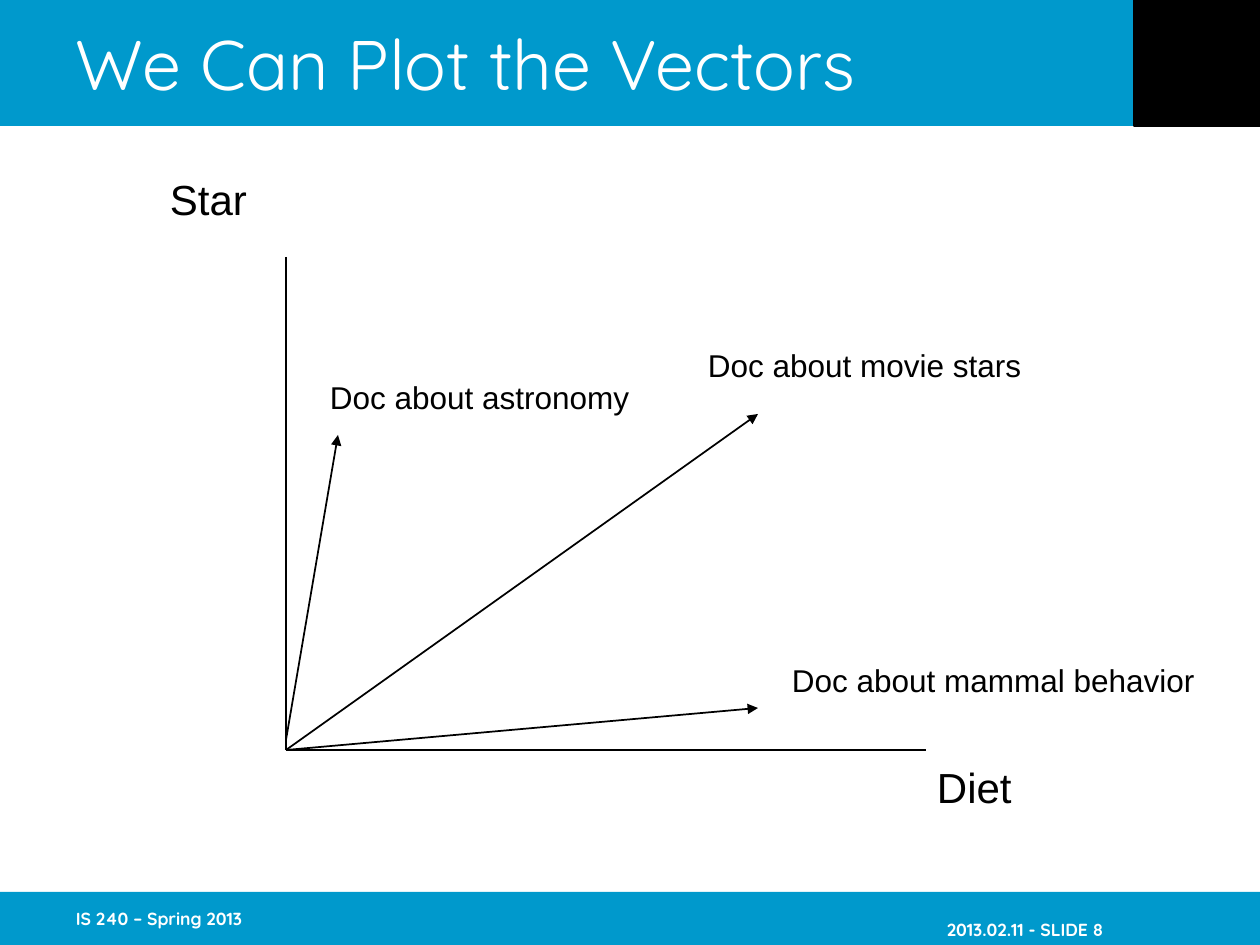
from dataclasses import dataclass

import pptx
import pptx.dml.color
import pptx.enum.shapes
import pptx.enum.text
import pptx.oxml
import pptx.oxml.ns
import pptx.util

PIXELS_PER_INCH = 126
ANCHOR = pptx.enum.text.MSO_ANCHOR
ALIGN = pptx.enum.text.PP_ALIGN


@dataclass(frozen=True)
class Theme:
    band: str = "0099CC"
    ink: str = "000000"
    paper: str = "FFFFFF"
    brand_font: str = "Quicksand"
    plot_font: str = "Arial"
    title_size: int = 40
    axis_size: int = 24
    label_size: int = 18
    footer_size: int = 10
    line_width: float = 1
    border_width: float = 0.75


THEME = Theme()


@dataclass(frozen=True)
class Area:
    left: int
    top: int
    width: int
    height: int


@dataclass(frozen=True)
class Insets:
    left: int = 13
    top: int = 6
    right: int = 13
    bottom: int = 6


@dataclass(frozen=True)
class Block:
    area: Area
    fill: str
    border: str | None = None


@dataclass(frozen=True)
class Caption:
    text: str
    area: Area
    size: int
    font: str = THEME.plot_font
    color: str = THEME.ink
    bold: bool = False
    anchor: ANCHOR = ANCHOR.TOP
    align: ALIGN = ALIGN.LEFT
    insets: Insets = Insets()


@dataclass(frozen=True)
class Stroke:
    start: tuple[int, int]
    end: tuple[int, int]
    arrow: bool = False


def px(length: int) -> pptx.util.Emu:
    return pptx.util.Emu(round(length * 914400 / PIXELS_PER_INCH))


def rgb(color: str) -> pptx.dml.color.RGBColor:
    return pptx.dml.color.RGBColor.from_string(color)


def place(area: Area) -> tuple[pptx.util.Emu, ...]:
    return px(area.left), px(area.top), px(area.width), px(area.height)


def draw_block(page, block: Block) -> None:
    shape = page.shapes.add_shape(
        pptx.enum.shapes.MSO_SHAPE.RECTANGLE, *place(block.area))
    shape.shadow.inherit = False
    shape.fill.solid()
    shape.fill.fore_color.rgb = rgb(block.fill)
    if block.border:
        shape.line.color.rgb = rgb(block.border)
        shape.line.width = pptx.util.Pt(THEME.border_width)
    else:
        shape.line.fill.background()


def draw_caption(page, caption: Caption) -> None:
    box = page.shapes.add_textbox(*place(caption.area))
    frame = box.text_frame
    frame.word_wrap = True
    frame.vertical_anchor = caption.anchor
    frame.margin_left = px(caption.insets.left)
    frame.margin_top = px(caption.insets.top)
    frame.margin_right = px(caption.insets.right)
    frame.margin_bottom = px(caption.insets.bottom)
    para = frame.paragraphs[0]
    para.alignment = caption.align
    span = para.add_run()
    span.text = caption.text
    span.font.name = caption.font
    span.font.size = pptx.util.Pt(caption.size)
    span.font.bold = caption.bold
    span.font.color.rgb = rgb(caption.color)


def draw_stroke(page, stroke: Stroke) -> None:
    line = page.shapes.add_connector(
        pptx.enum.shapes.MSO_CONNECTOR.STRAIGHT,
        *map(px, stroke.start + stroke.end))
    line.line.color.rgb = rgb(THEME.ink)
    line.line.width = pptx.util.Pt(THEME.line_width)
    properties = line.line._get_or_add_ln()
    if stroke.arrow:
        head = pptx.oxml.parse_xml(
            f'<a:tailEnd {pptx.oxml.ns.nsdecls("a")} type="triangle"/>')
        properties.append(head)
    effects = pptx.oxml.parse_xml(
        f'<a:effectLst {pptx.oxml.ns.nsdecls("a")}/>')
    properties.addnext(effects)


def band_caption(text: str, area: Area, size: int, **options) -> Caption:
    return Caption(text, area, size, THEME.brand_font, THEME.paper,
                   anchor=ANCHOR.MIDDLE, **options)


# Header and footer bands
BLOCKS = [
    Block(Area(0, 0, 1260, 126), THEME.band),
    Block(Area(0, 892, 1260, 53), THEME.band),
    Block(Area(1134, 0, 126, 126), THEME.ink, border=THEME.ink),
]

# Axes and document vectors, all from one origin
ORIGIN = (286, 750)
STROKES = [
    Stroke((286, 257), ORIGIN),
    Stroke(ORIGIN, (926, 750)),
    Stroke((286, 740), (338, 435), arrow=True),
    Stroke(ORIGIN, (758, 708), arrow=True),
    Stroke(ORIGIN, (758, 414), arrow=True),
]

CAPTIONS = [
    # Title and footer
    band_caption("We Can Plot the Vectors", Area(63, 0, 1071, 126),
                 THEME.title_size),
    band_caption("IS 240 – Spring 2013", Area(63, 892, 262, 53),
                 THEME.footer_size, bold=True, insets=Insets(right=0)),
    band_caption("2013.02.11 - SLIDE 8", Area(935, 892, 262, 53),
                 THEME.footer_size, bold=True, align=ALIGN.RIGHT,
                 insets=Insets(left=0, top=23, right=94, bottom=0)),
    # Axis names, with room to stay on one line
    Caption("Star", Area(157, 168, 114, 63), THEME.axis_size),
    Caption("Diet", Area(924, 756, 114, 63), THEME.axis_size),
    # Vector labels, with room to stay on one line
    Caption("Doc about astronomy", Area(317, 372, 340, 50), THEME.label_size),
    Caption("Doc about movie stars", Area(695, 340, 354, 50), THEME.label_size),
    Caption("Doc about mammal behavior", Area(779, 655, 444, 50),
            THEME.label_size),
]


def main() -> None:
    deck = pptx.Presentation()
    deck.slide_width, deck.slide_height = px(1260), px(945)
    page = deck.slides.add_slide(deck.slide_layouts[6])
    for block in BLOCKS:
        draw_block(page, block)
    for stroke in STROKES:
        draw_stroke(page, stroke)
    for caption in CAPTIONS:
        draw_caption(page, caption)
    deck.save("out.pptx")


if __name__ == "__main__":
    main()
